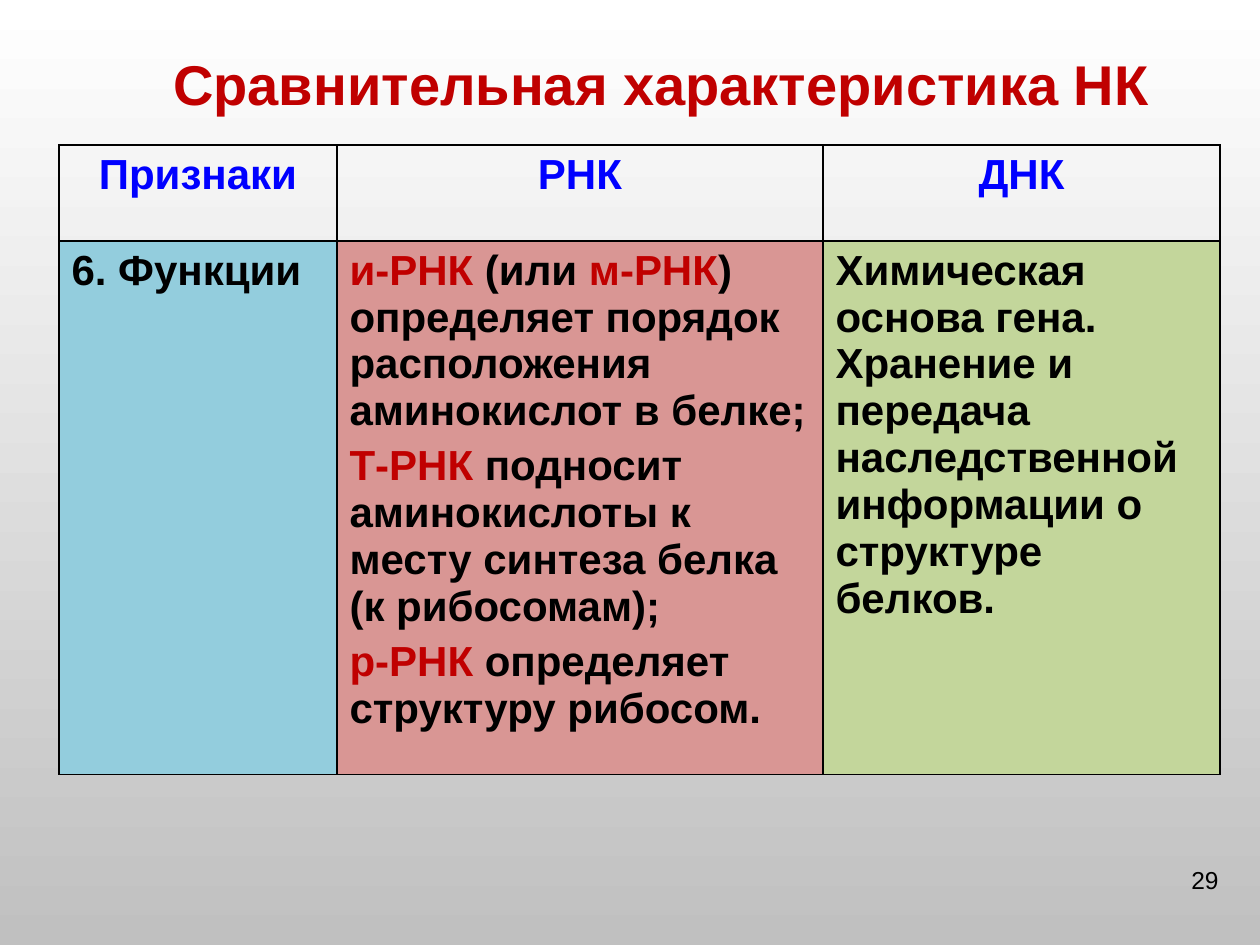
"""Build a slide with a table comparing RNA and DNA by function."""
from dataclasses import dataclass

import lxml.etree
import pptx
import pptx.dml.color
import pptx.enum.text
import pptx.oxml.ns
import pptx.util

SCALE = 914400 / 126
FONT = "Arial"
COLORS = {
    "white": "FFFFFF", "silver": "C0C0C0", "black": "000000", "red": "C00000",
    "blue": "0000FF", "sky": "93CDDD", "rose": "D99694", "green": "C3D69B",
}
ALIGN = pptx.enum.text.PP_ALIGN


@dataclass(frozen=True)
class Span:
    text: str
    color: str = "black"


@dataclass(frozen=True)
class Entry:
    paragraphs: list[list[Span]]
    fill: str | None = None
    align: ALIGN = ALIGN.LEFT


def px(length: int) -> pptx.util.Emu:
    return pptx.util.Emu(round(length * SCALE))


def rgb(name: str) -> pptx.dml.color.RGBColor:
    return pptx.dml.color.RGBColor.from_string(COLORS[name])


def style(font, size: int, color: str, bold: bool) -> None:
    font.name = FONT
    font.size = pptx.util.Pt(size)
    font.bold = bold
    font.color.rgb = rgb(color)


def place(shape, left: int, top: int, width: int, height: int) -> None:
    shape.left, shape.top = px(left), px(top)
    shape.width, shape.height = px(width), px(height)


def paint_background(page) -> None:
    fill = page.background.fill
    fill.gradient()
    fill.gradient_angle = 270
    for stop, color in zip(fill.gradient_stops, ("white", "silver")):
        stop.color.rgb = rgb(color)


def add_title(page, text: str) -> None:
    title = page.shapes.title
    place(title, 126, 35, 1071, 96)
    frame = title.text_frame
    frame.text = text
    frame.vertical_anchor = pptx.enum.text.MSO_ANCHOR.MIDDLE
    para = frame.paragraphs[0]
    para.alignment = ALIGN.CENTER
    style(para.runs[0].font, 32, "red", True)


def add_page_number(page, text: str) -> None:
    box = page.shapes.add_textbox(px(937), px(859), px(294), px(66))
    box.text_frame.word_wrap = True
    para = box.text_frame.paragraphs[0]
    para.text = text
    para.alignment = ALIGN.RIGHT
    style(para.runs[0].font, 14, "black", False)


def add_borders(cell) -> None:
    properties = cell._tc.get_or_add_tcPr()
    for index, side in enumerate(("lnL", "lnR", "lnT", "lnB")):
        line = lxml.etree.Element(pptx.oxml.ns.qn(f"a:{side}"), w=str(pptx.util.Pt(1)))
        solid = lxml.etree.SubElement(line, pptx.oxml.ns.qn("a:solidFill"))
        lxml.etree.SubElement(solid, pptx.oxml.ns.qn("a:srgbClr"), val=COLORS["black"])
        properties.insert(index, line)


def fill_cell(cell, entry: Entry) -> None:
    if entry.fill:
        cell.fill.solid()
        cell.fill.fore_color.rgb = rgb(entry.fill)
    else:
        cell.fill.background()
    add_borders(cell)
    frame = cell.text_frame
    for index, spans in enumerate(entry.paragraphs):
        para = frame.add_paragraph() if index else frame.paragraphs[0]
        para.alignment = entry.align
        if index:
            para.space_before = pptx.util.Pt(4.8)
        for span in spans:
            run = para.add_run()
            run.text = span.text
            style(run.font, 24, span.color, True)


def add_comparison(page, entries: list[list[Entry]], widths: list[int], heights: list[int]) -> None:
    shape = page.shapes.add_table(
        len(heights), len(widths), px(59), px(145), px(sum(widths)), px(sum(heights)))
    table = shape.table
    table.first_row = table.horz_banding = False
    for column, width in zip(table.columns, widths):
        column.width = px(width)
    for row, height, row_entries in zip(table.rows, heights, entries):
        row.height = px(height)
        for cell, entry in zip(row.cells, row_entries):
            fill_cell(cell, entry)


HEADER = [
    Entry([[Span(name, "blue")]], align=ALIGN.CENTER)
    for name in ("Признаки", "РНК", "ДНК")
]
FUNCTIONS = [
    Entry([[Span("6. Функции")]], "sky"),
    Entry([
        [Span("и-РНК", "red"), Span(" (или "), Span("м-РНК", "red"),
         Span(") определяет порядок расположения аминокислот в белке;")],
        [Span("Т-РНК", "red"),
         Span(" подносит аминокислоты к месту синтеза белка (к рибосомам);")],
        [Span("p-РНК ", "red"), Span("определяет структуру рибосом.")],
    ], "rose"),
    Entry([[Span("Химическая основа гена. Хранение и передача наследственной "
                 "информации о структуре белков.")]], "green"),
]


def main() -> None:
    deck = pptx.Presentation()
    deck.slide_width, deck.slide_height = px(1260), px(945)
    page = deck.slides.add_slide(deck.slide_layouts.get_by_name("Title Only"))
    paint_background(page)
    add_page_number(page, "29")
    add_title(page, "Сравнительная характеристика НК")
    add_comparison(page, [HEADER, FUNCTIONS], [278, 486, 397], [96, 497])
    deck.save("out.pptx")


if __name__ == "__main__":
    main()
